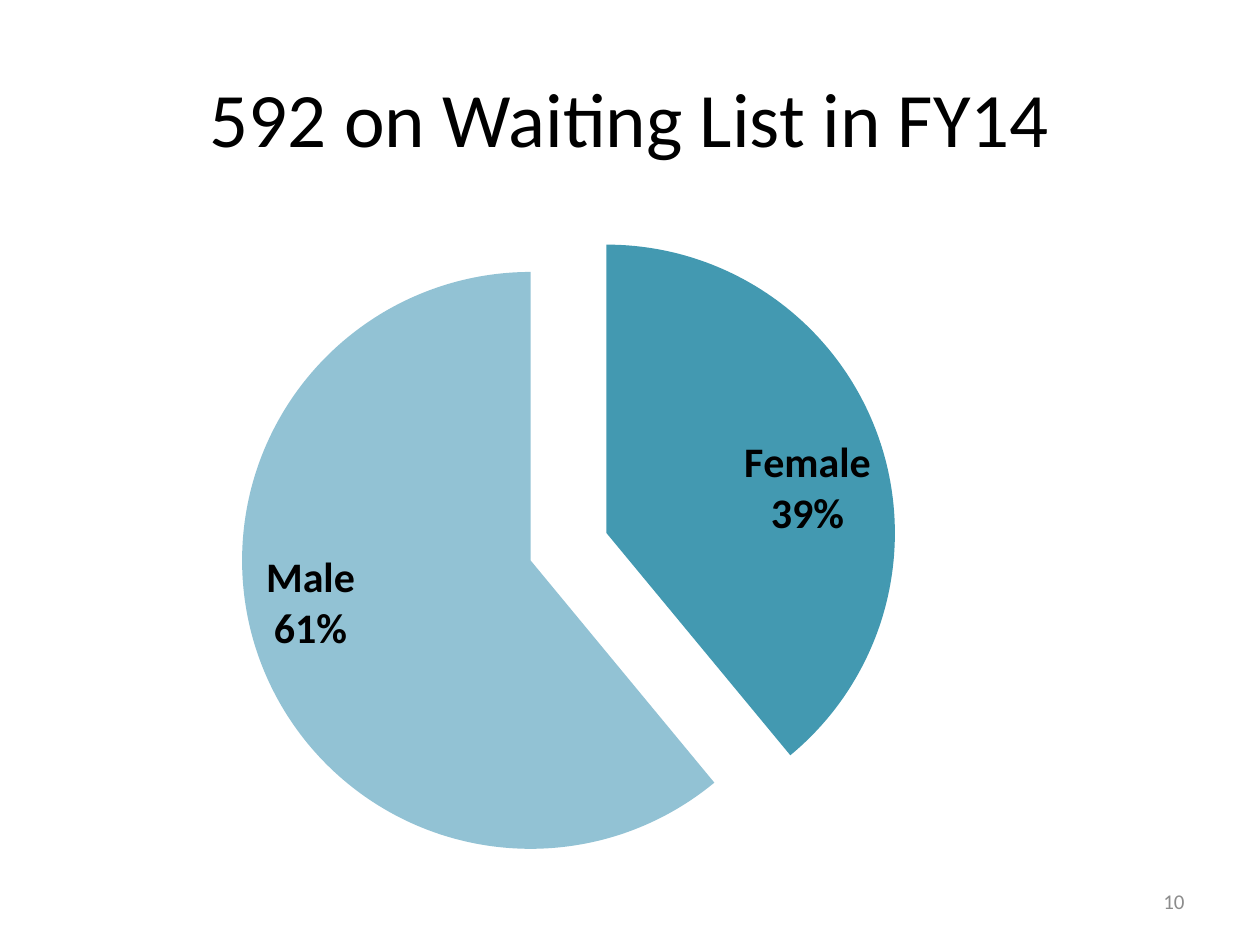
from lxml import etree
from pptx import Presentation
from pptx.chart.data import CategoryChartData
from pptx.dml.color import RGBColor
from pptx.enum.chart import XL_CHART_TYPE, XL_LABEL_POSITION
from pptx.enum.text import MSO_ANCHOR, PP_ALIGN
from pptx.oxml.ns import qn
from pptx.util import Inches, Pt

PIE = XL_CHART_TYPE.PIE
INSIDE_END = XL_LABEL_POSITION.INSIDE_END
MIDDLE = MSO_ANCHOR.MIDDLE
CENTER, RIGHT = PP_ALIGN.CENTER, PP_ALIGN.RIGHT

TITLE = "592 on Waiting List in FY14"
PAGE_NUMBER = "10"
SHARES = [("Female", 39, "4399B1"), ("Male", 61, "92C2D4")]
EXPLOSION = 14
PLOT_LAYOUT = {"x": 0.13, "y": 0.08, "w": 0.6, "h": 0.87}
THEME = {
    "font": "Calibri",
    "text": "000000",
    "muted": "8C8C8C",
    "title_size": 44,
    "label_size": 24,
    "number_size": 12,
}


def set_font(font, size, color, bold=False):
    font.name = THEME["font"]
    font.size = Pt(size)
    font.bold = bold
    font.color.rgb = RGBColor.from_string(color)


def add_text(slide, text, box, size, color, align):
    tf = slide.shapes.add_textbox(*map(Inches, box)).text_frame
    tf.word_wrap = True
    tf.vertical_anchor = MIDDLE
    p = tf.paragraphs[0]
    p.text = text
    p.alignment = align
    set_font(p.font, size, color)


def set_plot_layout(chart):
    plot_area = chart.plots[0]._element.getparent()
    for old in plot_area.findall(qn("c:layout")):
        plot_area.remove(old)
    layout = etree.Element(qn("c:layout"))
    manual = etree.SubElement(layout, qn("c:manualLayout"))
    values = {"layoutTarget": "inner", "xMode": "edge", "yMode": "edge", **PLOT_LAYOUT}
    for tag, value in values.items():
        etree.SubElement(manual, qn(f"c:{tag}")).set("val", str(value))
    plot_area.insert(0, layout)


def add_pie(slide, box):
    data = CategoryChartData()
    data.categories = [name for name, _, _ in SHARES]
    data.add_series("Series 1", [value for _, value, _ in SHARES])
    chart = slide.shapes.add_chart(PIE, *map(Inches, box), data).chart
    chart.has_legend = False
    chart.has_title = False
    set_font(chart.font, THEME["label_size"], THEME["text"])
    set_plot_layout(chart)

    plot = chart.plots[0]
    plot.vary_by_categories = True
    series = plot.series[0]
    for i, (_, _, color) in enumerate(SHARES):
        fill = series.points[i].format.fill
        fill.solid()
        fill.fore_color.rgb = RGBColor.from_string(color)
    explosion = etree.Element(qn("c:explosion"))
    explosion.set("val", str(EXPLOSION))
    series._element.find(qn("c:dPt")).addprevious(explosion)

    plot.has_data_labels = True
    labels = plot.data_labels
    labels.show_category_name = True
    labels.show_percentage = True
    labels.show_value = False
    labels.position = INSIDE_END
    set_font(labels.font, THEME["label_size"], THEME["text"], bold=True)
    separator = etree.Element(qn("c:separator"))
    separator.text = "\n"
    labels._element.find(qn("c:showBubbleSize")).addnext(separator)


prs = Presentation()
prs.slide_width, prs.slide_height = Inches(10), Inches(7.5)
slide = prs.slides.add_slide(prs.slide_layouts[6])
add_text(slide, TITLE, (0.5, 0.3, 9, 1.25), THEME["title_size"], THEME["text"], CENTER)
add_pie(slide, (0.75, 1.25, 8.75, 6))
add_text(slide, PAGE_NUMBER, (7.17, 6.95, 2.33, 0.4), THEME["number_size"], THEME["muted"], RIGHT)
prs.save("out.pptx")
